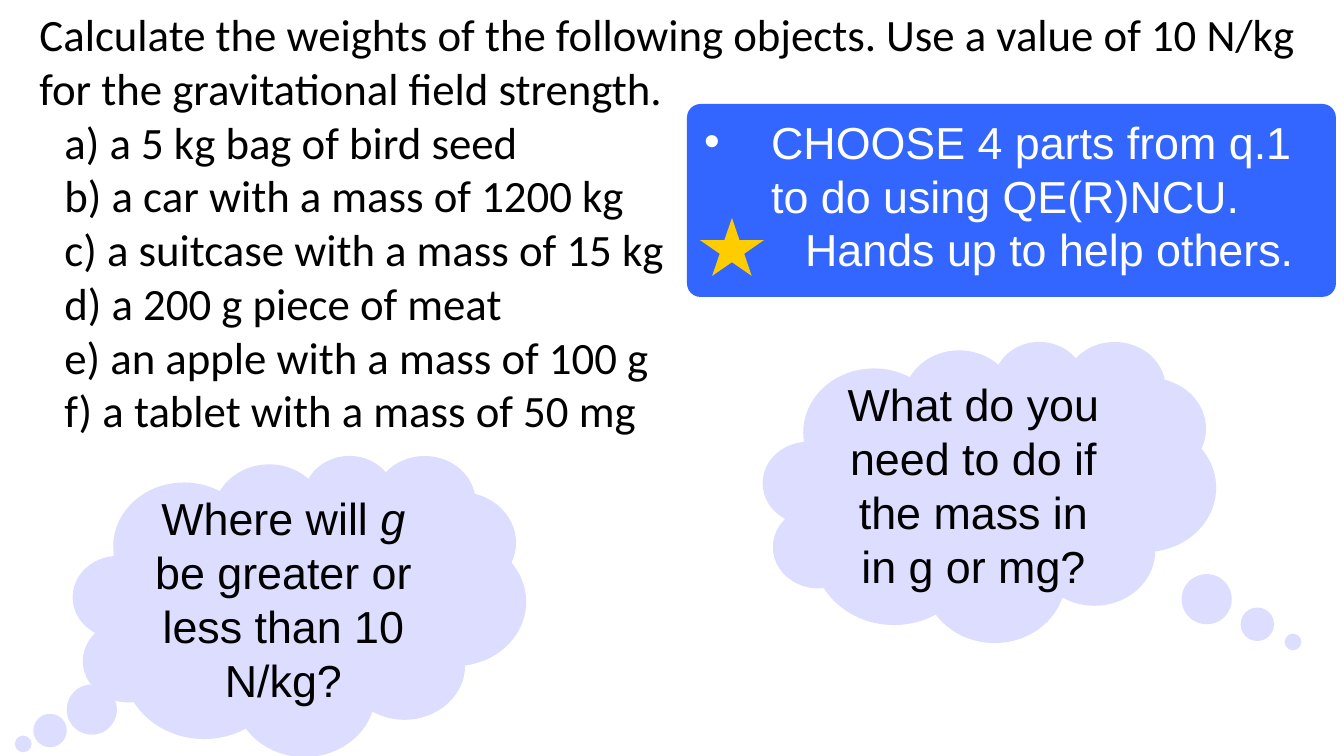
from dataclasses import dataclass

from lxml.etree import SubElement
from pptx import Presentation
from pptx.dml.color import RGBColor
from pptx.enum.shapes import MSO_SHAPE as Preset
from pptx.enum.text import MSO_ANCHOR as Anchor, MSO_AUTO_SIZE as AutoSize, PP_ALIGN as Align
from pptx.oxml.ns import qn
from pptx.util import Emu, Pt

EMU_PER_PX = 914400 / 134.4


def px(length: int) -> Emu:
    return Emu(round(length * EMU_PER_PX))


def colour(hex_value: str) -> RGBColor:
    return RGBColor.from_string(hex_value)


@dataclass(frozen=True)
class Box:
    left: int
    top: int
    width: int
    height: int

    def emu(self) -> tuple:
        return px(self.left), px(self.top), px(self.width), px(self.height)


@dataclass(frozen=True)
class Run:
    text: str
    italic: bool = False


@dataclass(frozen=True)
class Paragraph:
    runs: tuple
    margin: int = 0
    indent: int = 0
    level: int = 0
    bullet: str = ""


@dataclass(frozen=True)
class Figure:
    preset: Preset
    box: Box
    fill: str
    adjustments: tuple = ()


@dataclass(frozen=True)
class Thought:
    box: Box
    tail: tuple
    runs: tuple


def write(frame, paragraphs: list, font: str, ink: str, align: Align = Align.LEFT) -> None:
    frame.word_wrap = True
    frame.auto_size = AutoSize.NONE
    for index, content in enumerate(paragraphs):
        paragraph = frame.add_paragraph() if index else frame.paragraphs[0]
        paragraph.level = content.level
        paragraph.alignment = align
        paragraph.line_spacing = Pt(28.8)
        paragraph.space_before = Pt(0)
        properties = paragraph._p.get_or_add_pPr()
        properties.set("marL", str(px(content.margin)))
        properties.set("indent", str(px(content.indent)))
        if content.bullet:
            SubElement(properties, qn("a:buFont")).set("typeface", "Arial")
            SubElement(properties, qn("a:buChar")).set("char", content.bullet)
        else:
            SubElement(properties, qn("a:buNone"))
        for part in content.runs:
            run = paragraph.add_run()
            run.text = part.text
            run.font.name = font
            run.font.size = Pt(24)
            run.font.italic = part.italic
            run.font.color.rgb = colour(ink)


def draw(slide, figure: Figure):
    shape = slide.shapes.add_shape(figure.preset, *figure.box.emu())
    shape.shadow.inherit = False
    shape.fill.solid()
    shape.fill.fore_color.rgb = colour(figure.fill)
    shape.line.fill.background()
    for index, value in enumerate(figure.adjustments):
        shape.adjustments[index] = value
    return shape


def draw_thought(slide, thought: Thought) -> None:
    cloud = draw(slide, Figure(Preset.CLOUD_CALLOUT, thought.box, "DDDDFF", thought.tail))
    cloud.text_frame.vertical_anchor = Anchor.MIDDLE
    write(cloud.text_frame, [Paragraph(thought.runs)], "Arial", "000000", Align.CENTER)


QUESTION = (
    "Calculate the weights of the following objects. "
    "Use a value of 10 N/kg for the gravitational field strength."
)
PARTS = (
    "a) a 5 kg bag of bird seed",
    "b) a car with a mass of 1200 kg",
    "c) a suitcase with a mass of 15 kg",
    "d) a 200 g piece of meat",
    "e) an apple with a mass of 100 g",
    "f) a tablet with a mass of 50 mg",
)
INSTRUCTIONS = [
    Paragraph((Run("CHOOSE 4 parts from q.1 to do using QE(R)NCU."),), 67, -67, bullet="•"),
    Paragraph((Run("Hands up to help others."),), 101),
]
THOUGHTS = (
    Thought(
        Box(763, 341, 453, 301),
        (0.67, 0.5),
        (Run("What do you need to do if the mass in in g or mg?"),),
    ),
    Thought(
        Box(73, 455, 453, 301),
        (-0.61, 0.46),
        (Run("Where will "), Run("g", italic=True), Run(" be greater or less than 10 N/kg?")),
    ),
)


def main() -> None:
    deck = Presentation()
    deck.slide_width, deck.slide_height = px(1344), px(756)
    slide = deck.slides.add_slide(deck.slide_layouts[1])
    unused_title = slide.shapes.title._element
    unused_title.getparent().remove(unused_title)

    question = slide.placeholders[1]
    question.left, question.top, question.width, question.height = Box(0, 0, 1344, 527).emu()
    question.text_frame.vertical_anchor = Anchor.TOP
    exercise = [Paragraph((Run(QUESTION),), 26)]
    exercise += [Paragraph((Run(part),), 51, level=1) for part in PARTS]
    write(question.text_frame, exercise, "Calibri", "000000")

    panel = draw(slide, Figure(Preset.ROUNDED_RECTANGLE, Box(687, 104, 649, 193), "3366FF", (0.07,)))
    panel.text_frame.vertical_anchor = Anchor.TOP
    write(panel.text_frame, INSTRUCTIONS, "Arial", "FFFFFF")
    draw(slide, Figure(Preset.STAR_5_POINT, Box(700, 218, 64, 58), "FFCC00"))

    for thought in THOUGHTS:
        draw_thought(slide, thought)

    deck.save("out.pptx")


if __name__ == "__main__":
    main()
